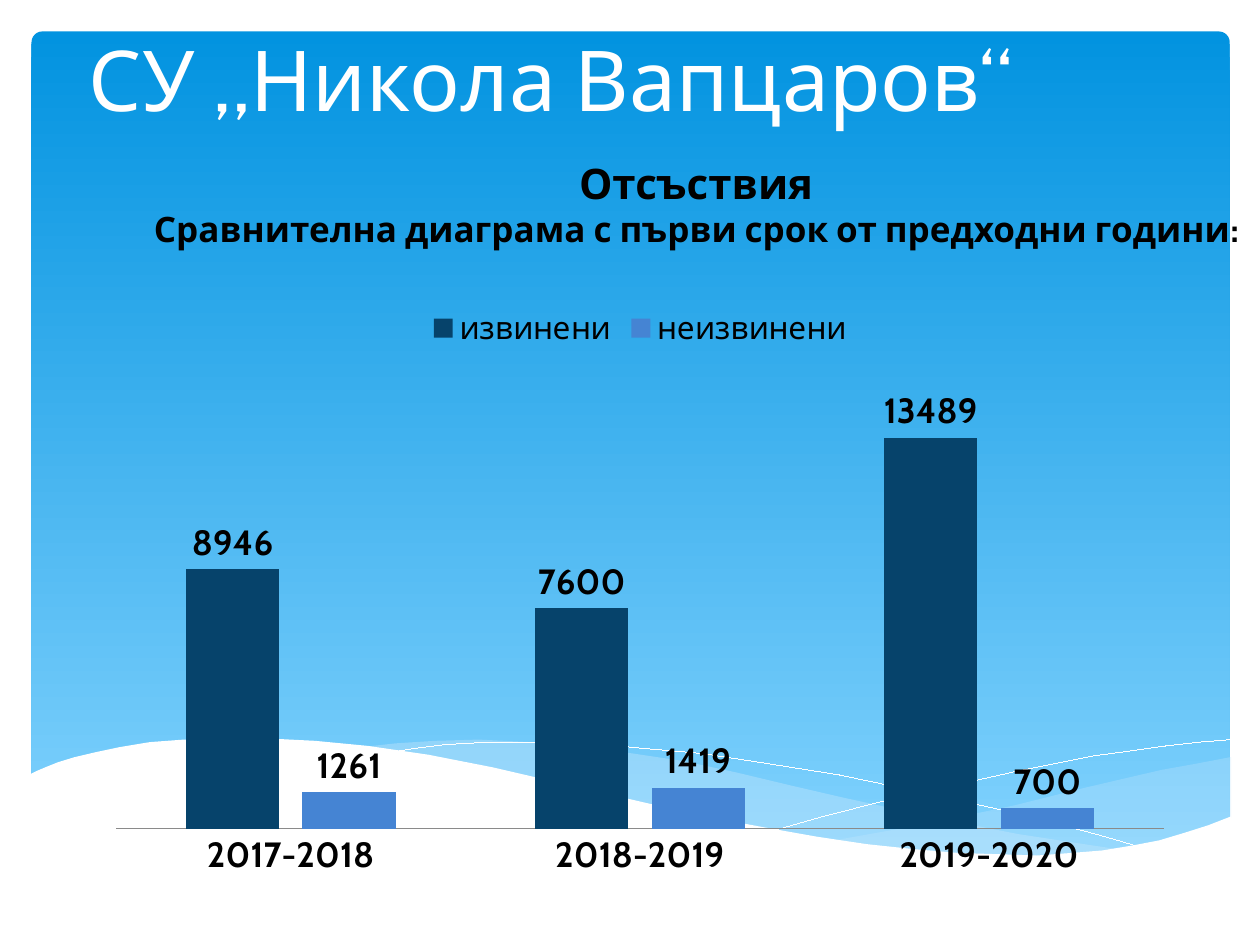
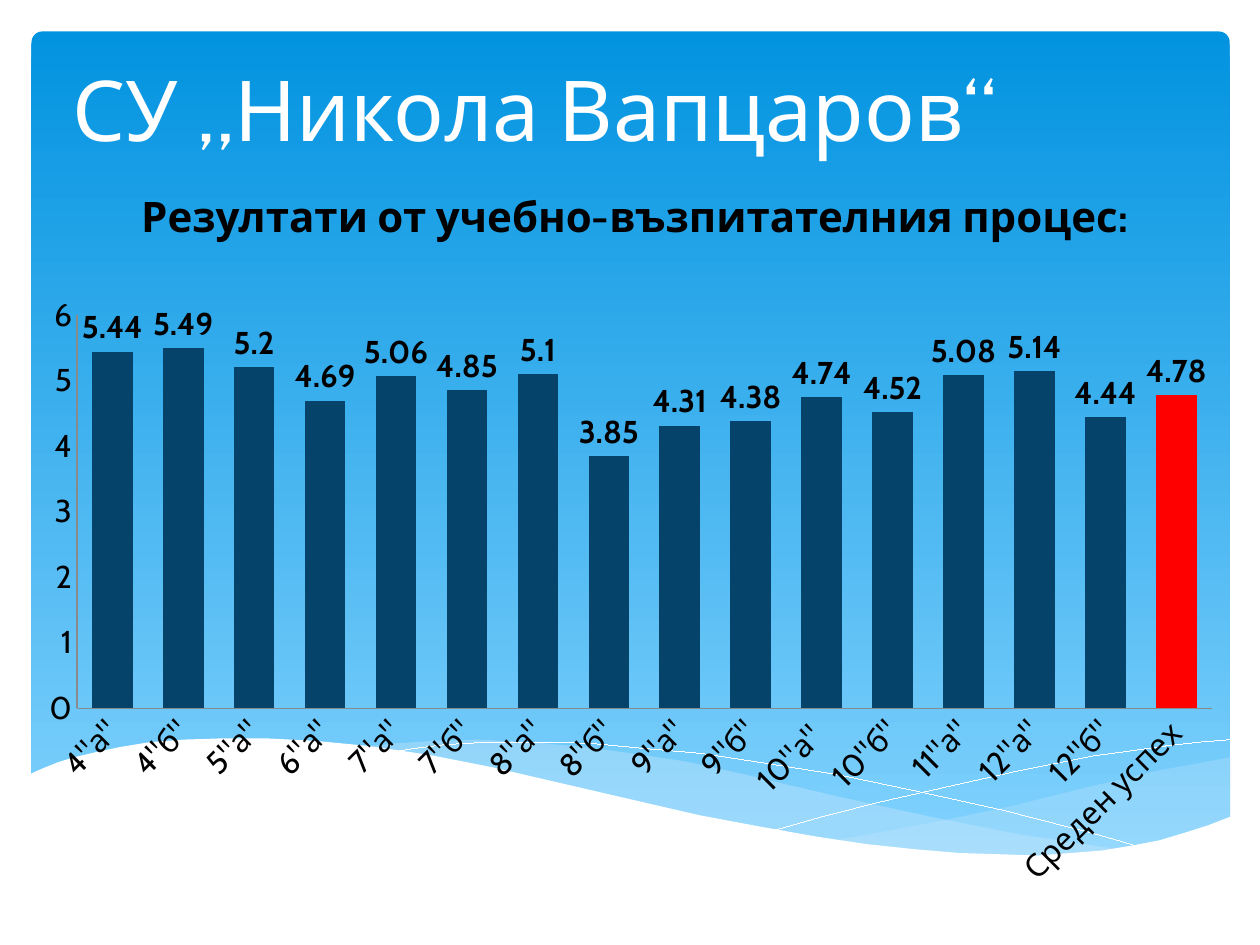
from dataclasses import dataclass

from pptx import Presentation
from pptx.chart.data import CategoryChartData
from pptx.dml.color import RGBColor
from pptx.enum.chart import XL_CHART_TYPE, XL_LABEL_POSITION, XL_LEGEND_POSITION, XL_TICK_MARK
from pptx.enum.shapes import MSO_SHAPE
from pptx.enum.text import MSO_ANCHOR, MSO_AUTO_SIZE, PP_ALIGN
from pptx.oxml import parse_xml
from pptx.oxml.ns import nsdecls
from pptx.oxml.xmlchemy import OxmlElement
from pptx.util import Pt

PIXEL = 9144


@dataclass(frozen=True)
class Theme:
    font: str = "Cabin"
    white: str = "FFFFFF"
    black: str = "000000"
    sky_top: str = "0293E0"
    sky_bottom: str = "83D3FE"
    mist: str = "C6E7FC"
    navy: str = "06436B"
    blue: str = "4584D3"
    red: str = "FF0000"
    axis: str = "8A8A8A"
    hairline: float = 0.01
    title_size: int = 48
    heading_size: int = 24
    subheading_size: int = 20
    large_label: int = 20
    label: int = 18
    chart_text: int = 10


@dataclass(frozen=True)
class Box:
    left: int
    top: int
    width: int
    height: int

    def emu(self):
        return [length * PIXEL for length in (self.left, self.top, self.width, self.height)]

    def inner(self, left, top, width, height):
        return Box(self.left + left, self.top + top, width, height)


THEME = Theme()
PAGE = Box(0, 0, 1000, 750)
SCHOOL = "СУ „Никола Вапцаров“"

RIGHT_MIST = [
    (976, 601), (950, 606), (922, 611), (892, 618), (862, 625), (806, 639), (754, 650),
    (707, 659), (662, 667), (692, 671), (719, 674), (746, 677), (770, 679), (804, 680),
    (836, 679), (864, 677), (890, 674), (914, 669), (937, 663), (964, 654), (977, 649), (977, 601),
]
LONG_MIST = [
    (894, 675), (867, 671), (808, 662), (742, 649), (669, 633), (630, 624), (584, 613),
    (542, 604), (502, 598), (465, 593), (420, 589), (380, 587), (345, 588), (314, 590),
    (287, 593), (323, 598), (363, 604), (405, 613), (450, 624), (491, 634), (530, 642),
    (585, 654), (635, 663), (681, 670), (723, 676), (762, 679), (797, 680), (829, 680),
    (859, 679), (894, 675),
]
FALLING_LINE = [
    (310, 597), (329, 594), (353, 591), (388, 589), (433, 589), (469, 590), (511, 594),
    (557, 598), (609, 606), (666, 615), (728, 628), (796, 643), (870, 662), (908, 673),
]
RISING_LINE = [
    (614, 659), (653, 648), (696, 637), (749, 625), (807, 612), (867, 600), (897, 596),
    (925, 592), (952, 589), (976, 587),
]
WHITE_WAVE = [
    (977, 648), (959, 655), (940, 661), (920, 667), (899, 671), (875, 675), (850, 677),
    (823, 679), (793, 678), (761, 677), (726, 674), (688, 670), (648, 664), (603, 656),
    (555, 647), (503, 635), (447, 622), (391, 609), (340, 599), (292, 592), (250, 588),
    (211, 586), (177, 586), (146, 587), (119, 589), (95, 593), (76, 597), (59, 601),
    (46, 605), (36, 609), (29, 612), (23, 615), (23, 731), (977, 731),
]


def color(value):
    return RGBColor.from_string(value)


def style_font(font, size, tint=THEME.black, bold=False):
    font.name = THEME.font
    font.size = Pt(size)
    font.bold = bold
    font.color.rgb = color(tint)


def draw_wave(slide, box, points, closed=True):
    placed = [(box.left + x, box.top + y) for x, y in points]
    builder = slide.shapes.build_freeform(*placed[0], scale=PIXEL)
    builder.add_line_segments(placed[1:], close=closed)
    shape = builder.convert_to_shape()
    shape.shadow.inherit = False
    return shape


def draw_filled_wave(slide, box, points, tint, opacity=100):
    shape = draw_wave(slide, box, points)
    shape.fill.solid()
    shape.fill.fore_color.rgb = color(tint)
    shape.line.fill.background()
    if opacity < 100:
        alpha = OxmlElement("a:alpha")
        alpha.set("val", str(opacity * 1000))
        shape.element.spPr.xpath("./a:solidFill/a:srgbClr")[0].append(alpha)
    return shape


def draw_line_wave(slide, box, points):
    shape = draw_wave(slide, box, points, closed=False)
    shape.fill.background()
    shape.line.color.rgb = color(THEME.white)
    shape.line.width = Pt(THEME.hairline)
    return shape


def draw_sky(slide, box):
    shape = slide.shapes.add_shape(MSO_SHAPE.ROUNDED_RECTANGLE, *box.emu())
    shape.adjustments[0] = 0.013
    shape.shadow.inherit = False
    shape.line.fill.background()
    shape.fill.gradient()
    shape.fill.gradient_angle = 270
    for stop, tint in zip(shape.fill.gradient_stops, (THEME.sky_top, THEME.sky_bottom)):
        stop.color.rgb = color(tint)
    return shape


def build_backdrop(slide, box):
    parts = [
        draw_sky(slide, box.inner(25, 25, 951, 660)),
        draw_filled_wave(slide, box, RIGHT_MIST, THEME.mist, 29),
        draw_filled_wave(slide, box, LONG_MIST, THEME.mist, 40),
        draw_line_wave(slide, box, FALLING_LINE),
        draw_line_wave(slide, box, RISING_LINE),
        draw_filled_wave(slide, box, WHITE_WAVE, THEME.white),
    ]
    layout = slide.slide_layout
    for placeholder in list(layout.placeholders)[1:]:
        layout.shapes.element.remove(placeholder.element)
    for position, part in enumerate(parts, start=2):
        layout.shapes.element.insert(position, part.element)


def add_text(paragraph, text, size, tint, bold=False):
    paragraph.alignment = PP_ALIGN.CENTER
    run = paragraph.add_run()
    run.text = text
    style_font(run.font, size, tint, bold)


def place_title(slide, box):
    title = slide.shapes.title
    title.left, title.top, title.width, title.height = box.emu()
    frame = title.text_frame
    frame.auto_size = MSO_AUTO_SIZE.NONE
    frame.vertical_anchor = MSO_ANCHOR.BOTTOM
    add_text(frame.paragraphs[0], SCHOOL, THEME.title_size, THEME.white)


def place_heading(slide, box, lines):
    frame = slide.shapes.add_textbox(*box.emu()).text_frame
    frame.word_wrap = True
    frame.margin_left = frame.margin_top = frame.margin_bottom = 0
    frame.margin_right = 2 * PIXEL
    for index, (text, size) in enumerate(lines):
        paragraph = frame.add_paragraph() if index else frame.paragraphs[0]
        add_text(paragraph, text, size, THEME.black, True)


def set_plot_area(chart, left, top, width, height):
    values = zip("xywh", (left, top, width, height))
    sizes = "".join(f'<c:{name} val="{value}"/>' for name, value in values)
    layout = parse_xml(
        f'<c:layout {nsdecls("c")}><c:manualLayout><c:layoutTarget val="inner"/>'
        f'<c:xMode val="edge"/><c:yMode val="edge"/>{sizes}</c:manualLayout></c:layout>'
    )
    plot_area = chart.element.xpath("c:chart/c:plotArea")[0]
    for previous in plot_area.xpath("c:layout"):
        plot_area.remove(previous)
    plot_area.insert(0, layout)


def style_axis(axis, size, bold=False):
    axis.has_major_gridlines = False
    axis.major_tick_mark = axis.minor_tick_mark = XL_TICK_MARK.NONE
    axis.format.line.color.rgb = color(THEME.axis)
    style_font(axis.tick_labels.font, size, bold=bold)


def add_columns(slide, box, categories, series_rows, label_size, bold_categories, maximum):
    data = CategoryChartData()
    data.categories = categories
    for name, values, _ in series_rows:
        data.add_series(name, values)
    frame = slide.shapes.add_chart(XL_CHART_TYPE.COLUMN_CLUSTERED, *box.emu(), data)
    chart = frame.chart
    style_font(chart.font, THEME.chart_text)
    chart.has_title = False
    chart.has_legend = False
    chart.plots[0].vary_by_categories = False
    style_axis(chart.category_axis, label_size, bold_categories)
    style_axis(chart.value_axis, label_size)
    chart.value_axis.minimum_scale = 0
    chart.value_axis.maximum_scale = maximum
    for series, (_, _, tint) in zip(chart.plots[0].series, series_rows):
        series.invert_if_negative = False
        series.format.fill.solid()
        series.format.fill.fore_color.rgb = color(tint)
        labels = series.data_labels
        labels.show_value = True
        labels.position = XL_LABEL_POSITION.OUTSIDE_END
        style_font(labels.font, label_size, bold=True)
    return chart


def place_absence_chart(slide, box):
    chart = add_columns(
        slide, box, ["2017-2018", "2018-2019", "2019-2020"],
        [("извинени", (8946, 7600, 13489), THEME.navy),
         ("неизвинени", (1261, 1419, 700), THEME.blue)],
        THEME.large_label, True, 16000,
    )
    chart.plots[0].gap_width = 150
    chart.plots[0].overlap = -25
    chart.value_axis.visible = False
    chart.has_legend = True
    chart.legend.position = XL_LEGEND_POSITION.TOP
    chart.legend.include_in_layout = False
    style_font(chart.legend.font, THEME.label)
    set_plot_area(chart, 0.02, 0.12, 0.96, 0.78)


def place_grade_chart(slide, box):
    categories = ['4"а"', '4"б"', '5"а"', '6"а"', '7"а"', '7"б"', '8"а"', '8"б"',
                  '9"а"', '9"б"', '10"а" ', '10"б"', '11"а"', '12"а"', '12"б"',
                  "Среден успех"]
    grades = [5.44, 5.49, 5.2, 4.69, 5.06, 4.85, 5.1, 3.85, 4.31, 4.38,
              4.74, 4.52, 5.08, 5.14, 4.44, 4.78]
    chart = add_columns(
        slide, box, categories, [("Series 1", grades, THEME.navy)], THEME.label, False, 6
    )
    chart.plots[0].gap_width = 75
    chart.value_axis.major_unit = 1
    average = chart.plots[0].series[0].points[len(grades) - 1].format.fill
    average.solid()
    average.fore_color.rgb = color(THEME.red)
    chart.element.xpath(".//c:catAx/c:txPr/a:bodyPr")[0].set("rot", "-2700000")


def build_absence_slide(slide, box):
    place_title(slide, box.inner(20, 13, 835, 94))
    place_heading(slide, box.inner(104, 125, 899, 85), [
        ("Отсъствия", THEME.heading_size),
        ("Сравнителна диаграма с първи срок от предходни години:", THEME.subheading_size),
    ])
    place_absence_chart(slide, box.inner(75, 233, 866, 472))


def build_grade_slide(slide, box):
    place_title(slide, box.inner(7, 37, 835, 94))
    place_heading(slide, box.inner(55, 151, 899, 50), [
        ("Резултати от учебно-възпитателния процес:", THEME.heading_size),
    ])
    place_grade_chart(slide, box.inner(20, 225, 961, 489))


def main():
    presentation = Presentation()
    presentation.slide_width = PAGE.width * PIXEL
    presentation.slide_height = PAGE.height * PIXEL
    title_only = presentation.slide_layouts[5]
    absence_slide, grade_slide = [presentation.slides.add_slide(title_only) for _ in range(2)]
    build_backdrop(absence_slide, PAGE)
    build_absence_slide(absence_slide, PAGE)
    build_grade_slide(grade_slide, PAGE)
    presentation.save("out.pptx")


if __name__ == "__main__":
    main()
